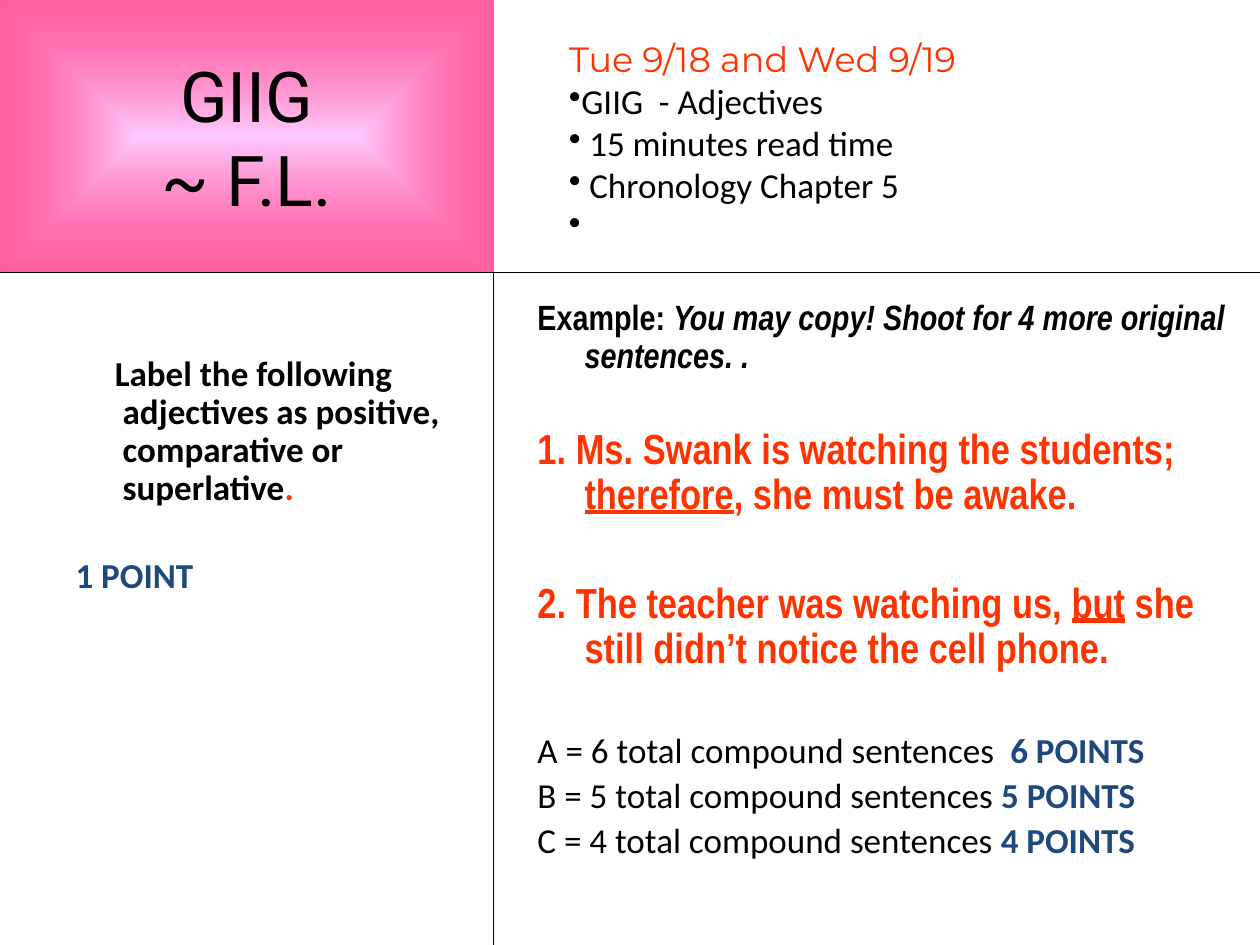
from lxml import etree
from pptx import Presentation
from pptx.dml.color import RGBColor
from pptx.enum.shapes import MSO_CONNECTOR
from pptx.enum.text import MSO_ANCHOR, MSO_AUTO_SIZE, PP_ALIGN
from pptx.oxml.ns import qn
from pptx.util import Cm, Pt

STRAIGHT = MSO_CONNECTOR.STRAIGHT
COLORS = {
    "black": "000000", "white": "FFFFFF", "red": "FF3300", "blue": "1F497D",
    "pale pink": "FFCCFF", "hot pink": "FF0066",
}
STYLES = {  # font, size, colour, emphasis
    "heading": ("Roboto", 40, "black", ""),
    "date": ("Montserrat", 20, "red", ""),
    "plain": ("Calibri", 20, "black", ""),
    "task": ("Calibri", 20, "black", "b"),
    "stop": ("Calibri", 20, "red", "b"),
    "points": ("Calibri", 20, "blue", "b"),
    "label": ("Arial Narrow", 20, "black", "b"),
    "note": ("Arial Narrow", 20, "black", "bi"),
    "sentence": ("Arial Narrow", 24, "red", "b"),
    "joiner": ("Arial Narrow", 24, "red", "bu"),
}

HEADING = "GIIG\v~ F.L."
AGENDA = ["Tue 9/18 and Wed 9/19", "GIIG  - Adjectives", " 15 minutes read time",
          " Chronology Chapter 5", " "]
HANGING = -0.95
# Each paragraph: space before in points, first line indent in cm, runs
TASK = [
    (0, -0.16, [("Label the following adjectives as positive, comparative or superlative",
                 "task"), (".", "stop")]),
    (29, HANGING, [("1 POINT", "points")]),
]
EXAMPLES = [
    (0, HANGING, [("Example: ", "label"),
                  ("You may copy! Shoot for 4 more original sentences. .", "note")]),
    (30, HANGING, [("1. Ms. Swank is watching the students; ", "sentence"),
                   ("therefore", "joiner"), (", she must be awake.", "sentence")]),
    (36, HANGING, [("2. The teacher was watching us, ", "sentence"), ("but", "joiner"),
                   (" she still didn’t notice the cell phone.", "sentence")]),
]
GRADES = [("A", 6, "  "), ("B", 5, " "), ("C", 4, " ")]
for row, (grade, count, gap) in enumerate(GRADES):
    EXAMPLES.append((4 if row else 35, HANGING, [
        (f"{grade} = {count} total compound sentences{gap}", "plain"),
        (f"{count} POINTS", "points")]))

WIDTH, HEIGHT = 25.4, 19.05
SPLIT_X, SPLIT_Y = 9.95, 5.5


def rgb(name):
    return RGBColor.from_string(COLORS[name])


def place(shape, left, top, width, height):
    shape.left, shape.top, shape.width, shape.height = map(Cm, (left, top, width, height))


def set_alpha(parent, percent):
    color = next(parent.iter(qn("a:srgbClr")))
    etree.SubElement(color, qn("a:alpha"), val=str(percent * 1000))


def style_run(run, style):
    name, size, color, emphasis = STYLES[style]
    font = run.font
    font.name, font.size, font.color.rgb = name, Pt(size), rgb(color)
    font.bold, font.italic, font.underline = (mark in emphasis for mark in "biu")


def fill_from_center(shape, inner, outer, outer_alpha):
    fill = shape.fill
    fill.gradient()
    for stop, color in zip(fill.gradient_stops, (inner, outer)):
        stop.color.rgb = rgb(color)
    gradient = shape._element.spPr.find(qn("a:gradFill"))
    set_alpha(gradient.findall(".//" + qn("a:gs"))[1], outer_alpha)
    gradient.remove(gradient.find(qn("a:lin")))
    center = etree.SubElement(gradient, qn("a:path"), path="shape")
    etree.SubElement(center, qn("a:fillToRect"), l="50000", t="50000", r="50000", b="50000")


def write_body(shape, content):
    text_frame = shape.text_frame
    text_frame.auto_size = MSO_AUTO_SIZE.NONE
    for index, (space, indent, runs) in enumerate(content):
        paragraph = text_frame.add_paragraph() if index else text_frame.paragraphs[0]
        paragraph.line_spacing = 0.9
        paragraph.space_before = Pt(space)
        properties = paragraph._p.get_or_add_pPr()
        properties.set("marL", str(Cm(0.95)))
        properties.set("indent", str(Cm(indent)))
        etree.SubElement(properties, qn("a:buNone"))
        for text, style in runs:
            run = paragraph.add_run()
            run.text = text
            style_run(run, style)


def add_line(slide, *ends):
    line = slide.shapes.add_connector(STRAIGHT, *map(Cm, ends))
    line.line.color.rgb = rgb("black")
    line.line.width = Pt(0.75)
    etree.SubElement(line._element.spPr, qn("a:effectLst"))


def main():
    presentation = Presentation()
    presentation.slide_width, presentation.slide_height = Cm(WIDTH), Cm(HEIGHT)
    slide = presentation.slides.add_slide(presentation.slide_layouts[3])
    title, task, examples = slide.placeholders

    place(title, 0, 0, SPLIT_X, SPLIT_Y)
    fill_from_center(title, "pale pink", "hot pink", 62)
    title.text_frame.text = HEADING
    title.text_frame.vertical_anchor = MSO_ANCHOR.MIDDLE
    title.text_frame.paragraphs[0].alignment = PP_ALIGN.CENTER
    for run in title.text_frame.paragraphs[0].runs:
        style_run(run, "heading")

    place(task, 1.27, 5.92, 9.1, 11.1)
    task.text_frame.margin_top = Cm(1.27)
    write_body(task, TASK)

    place(examples, 10.58, 5.92, WIDTH - 10.58, HEIGHT - 5.92)
    examples.fill.solid()
    examples.fill.fore_color.rgb = rgb("white")
    set_alpha(examples._element.spPr, 57)
    write_body(examples, EXAMPLES)

    agenda = slide.shapes.add_textbox(Cm(11.22), Cm(0.64), Cm(11.8), Cm(4.65))
    agenda.text_frame.word_wrap = False
    agenda.text_frame.text = "\n".join(AGENDA)
    for index, paragraph in enumerate(agenda.text_frame.paragraphs):
        style_run(paragraph.runs[0], "plain" if index else "date")
        if index:
            etree.SubElement(paragraph._p.get_or_add_pPr(), qn("a:buChar"), char="•")

    add_line(slide, SPLIT_X, SPLIT_Y, SPLIT_X, HEIGHT)
    add_line(slide, 0, SPLIT_Y, WIDTH, SPLIT_Y)
    presentation.save("out.pptx")


if __name__ == "__main__":
    main()
